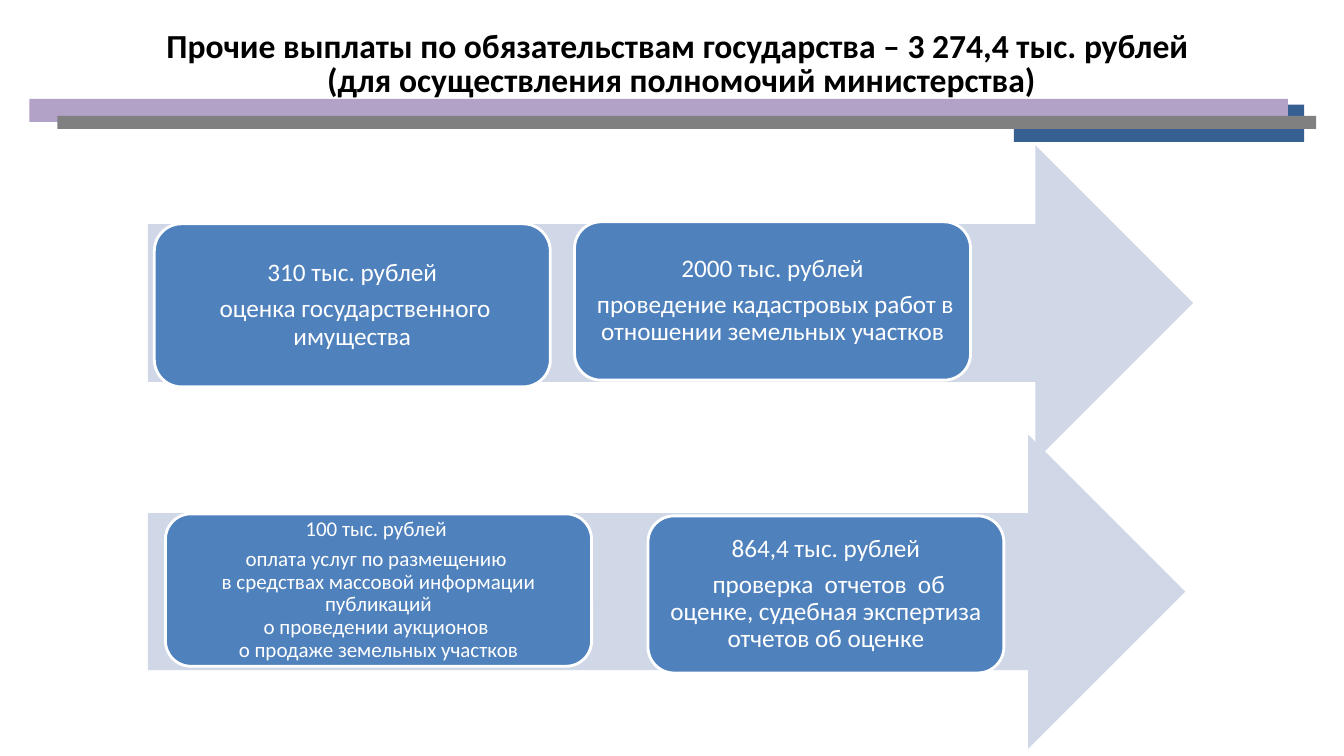
from dataclasses import dataclass

from pptx import Presentation
from pptx.dml.color import RGBColor
from pptx.enum.shapes import MSO_SHAPE
from pptx.enum.text import MSO_ANCHOR, MSO_AUTO_SIZE, PP_ALIGN
from pptx.shapes.autoshape import Shape
from pptx.slide import Slide
from pptx.text.text import TextFrame
from pptx.util import Cm, Pt

COLORS = {
    "title": "000000",
    "navy": "376092",
    "lilac": "B3A2C7",
    "gray": "808080",
    "arrow": "D0D8E8",
    "card": "4F81BD",
    "white": "FFFFFF",
}
FONT = "Calibri"
TITLE_LINES = (
    "Прочие выплаты по обязательствам государства – 3 274,4 тыс. рублей ",
    "(для осуществления полномочий министерства)",
)


@dataclass(frozen=True)
class Box:
    """Position and size in centimetres."""
    left: float
    top: float
    width: float
    height: float


@dataclass(frozen=True)
class Bar:
    box: Box
    color: str


@dataclass(frozen=True)
class Card:
    box: Box
    amount: str
    purpose: tuple[str, ...]
    size: int = 18
    inset: float = 0.18


@dataclass(frozen=True)
class ExpenseRow:
    arrow: Box
    cards: tuple[Card, ...]


TITLE_BOX = Box(0.99, 0.66, 32.36, 2.01)
BARS = (
    Bar(Box(25.55, 2.64, 7.32, 0.94), "navy"),
    Bar(Box(0.74, 2.49, 31.72, 0.58), "lilac"),
    Bar(Box(1.45, 2.92, 31.72, 0.33), "gray"),
)
EXPENSE_ROWS = (
    ExpenseRow(Box(3.73, 10.95, 26.14, 7.92), (
        Card(Box(4.17, 12.95, 10.74, 3.84), "100 тыс. рублей ", (
            "оплата услуг по размещению ",
            "в средствах массовой информации публикаций",
            "о проведении аукционов ",
            "о продаже земельных участков",
        ), size=15, inset=0.15),
        Card(Box(16.33, 13, 8.97, 3.96), "864,4 тыс. рублей", (
            " проверка  отчетов  об оценке, судебная экспертиза отчетов об оценке",
        )),
    )),
    ExpenseRow(Box(3.73, 3.66, 26.34, 7.95), (
        Card(Box(3.89, 5.64, 9.98, 4.11), "310 тыс. рублей", (
            " оценка государственного имущества",
        )),
        Card(Box(14.48, 5.59, 9.98, 3.99), "2000 тыс. рублей", (
            " проведение кадастровых работ в отношении земельных участков",
        )),
    )),
)


def rgb(name: str) -> RGBColor:
    return RGBColor.from_string(COLORS[name])


def set_attributes(target: object, values: dict[str, object]) -> None:
    for name, value in values.items():
        setattr(target, name, value)


def add_filled_shape(slide: Slide, kind: MSO_SHAPE, box: Box, color: str) -> Shape:
    shape = slide.shapes.add_shape(
        kind, Cm(box.left), Cm(box.top), Cm(box.width), Cm(box.height))
    shape.shadow.inherit = False
    shape.fill.solid()
    shape.fill.fore_color.rgb = rgb(color)
    shape.line.fill.background()
    return shape


def write_paragraphs(text_frame: TextFrame, paragraphs: tuple[tuple[str, ...], ...],
                     color: str, font_format: dict[str, object],
                     paragraph_format: dict[str, object]) -> None:
    """Write each tuple of lines as one paragraph with line breaks."""
    for number, lines in enumerate(paragraphs):
        paragraph = text_frame.add_paragraph() if number else text_frame.paragraphs[0]
        set_attributes(paragraph, {"alignment": PP_ALIGN.CENTER, **paragraph_format})
        for line_number, line in enumerate(lines):
            if line_number:
                paragraph.add_line_break()
            run = paragraph.add_run()
            run.text = line
            set_attributes(run.font, {"name": FONT, **font_format})
            run.font.color.rgb = rgb(color)


def format_title(slide: Slide) -> None:
    title = slide.shapes.title
    set_attributes(title, {
        "left": Cm(TITLE_BOX.left), "top": Cm(TITLE_BOX.top),
        "width": Cm(TITLE_BOX.width), "height": Cm(TITLE_BOX.height),
    })
    set_attributes(title.text_frame, {
        "word_wrap": True,
        "auto_size": MSO_AUTO_SIZE.SHAPE_TO_FIT_TEXT,
        "vertical_anchor": MSO_ANCHOR.TOP,
    })
    write_paragraphs(title.text_frame, tuple((line,) for line in TITLE_LINES), "title",
                     {"size": Pt(24), "bold": True},
                     {"line_spacing": 0.85, "space_before": Pt(0)})


def add_card(slide: Slide, card: Card) -> None:
    shape = add_filled_shape(slide, MSO_SHAPE.ROUNDED_RECTANGLE, card.box, "card")
    shape.line.color.rgb = rgb("white")
    shape.line.width = Pt(2)
    margins = ("margin_left", "margin_top", "margin_right", "margin_bottom")
    set_attributes(shape.text_frame, {
        "word_wrap": True,
        "vertical_anchor": MSO_ANCHOR.MIDDLE,
        **dict.fromkeys(margins, Cm(card.inset)),
    })
    write_paragraphs(shape.text_frame, ((card.amount,), card.purpose), "white",
                     {"size": Pt(card.size)},
                     {"line_spacing": 0.9, "space_after": Pt(0.35 * card.size)})


def main() -> None:
    presentation = Presentation()
    presentation.slide_width = Cm(33.87)
    presentation.slide_height = Cm(19.05)
    title_only = presentation.slide_layouts.get_by_name("Title Only")
    slide = presentation.slides.add_slide(title_only)

    format_title(slide)
    for bar in BARS:
        add_filled_shape(slide, MSO_SHAPE.RECTANGLE, bar.box, bar.color)
    for row in EXPENSE_ROWS:
        add_filled_shape(slide, MSO_SHAPE.RIGHT_ARROW, row.arrow, "arrow")
        for card in row.cards:
            add_card(slide, card)

    presentation.save("out.pptx")


if __name__ == "__main__":
    main()
